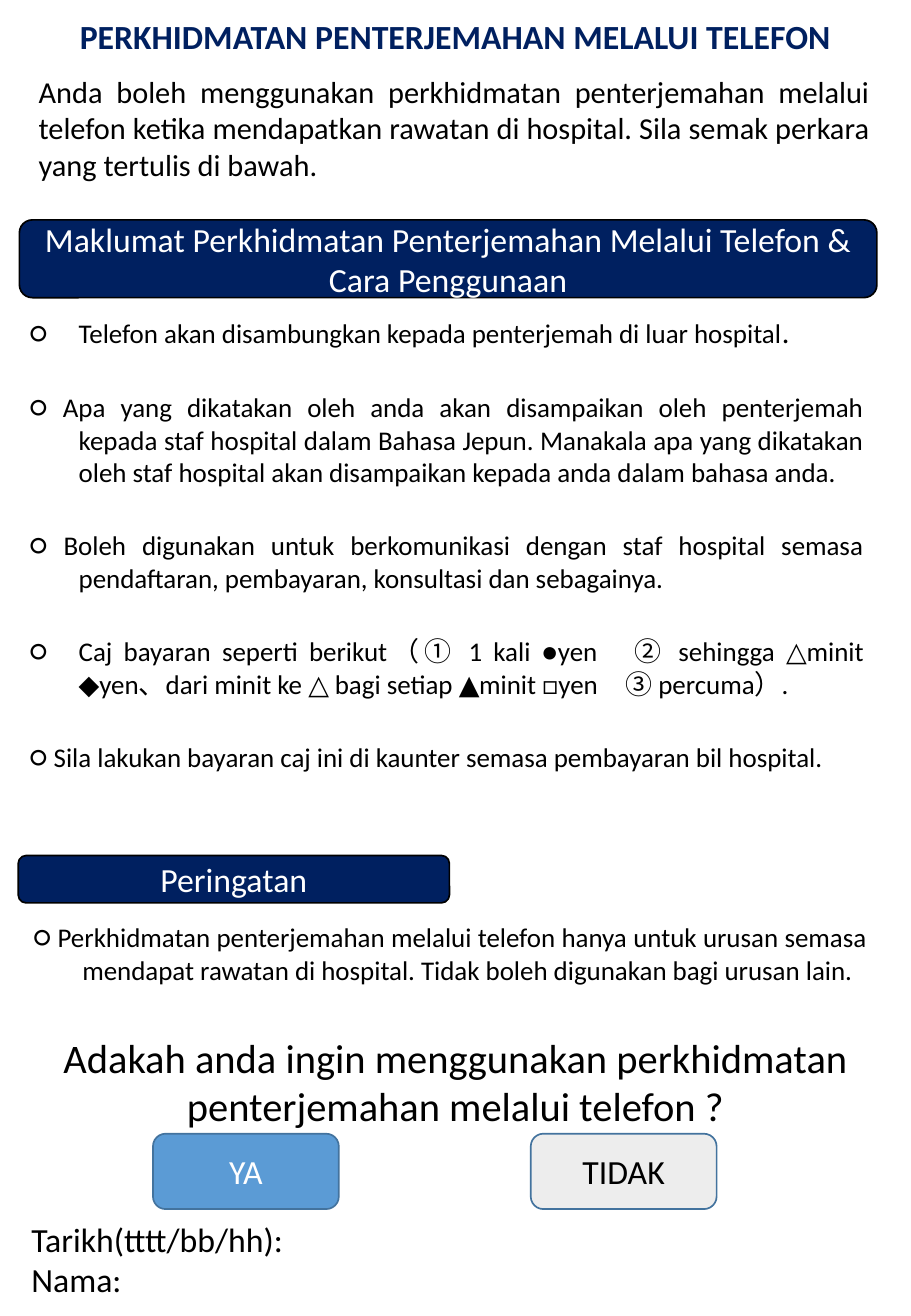
from pptx import Presentation
from pptx.dml.color import RGBColor
from pptx.enum.shapes import MSO_SHAPE
from pptx.enum.text import MSO_ANCHOR, MSO_AUTO_SIZE, PP_ALIGN as Align
from pptx.util import Emu, Pt

EMU_PER_PX = 9144  # 100 px to the inch
FONT = "Calibri"
MARK_SIZE, ITEM_SIZE = 18, 16
HANG = 40
COLORS = {
    "navy": "002060",
    "black": "000000",
    "white": "FFFFFF",
    "blue": "5B9BD5",
    "grey": "EDEDED",
    "outline": "43739E",
}

SERVICE_ITEMS = [
    [("○\t", MARK_SIZE),
     ("Telefon akan disambungkan kepada penterjemah di luar hospital", ITEM_SIZE),
     (".", MARK_SIZE)],
    [("○ ", MARK_SIZE),
     ("Apa yang dikatakan oleh anda akan disampaikan oleh penterjemah kepada staf "
      "hospital dalam Bahasa Jepun. Manakala apa yang dikatakan oleh staf hospital "
      "akan disampaikan kepada anda dalam bahasa anda.", ITEM_SIZE)],
    [("○ ", MARK_SIZE),
     ("Boleh digunakan untuk berkomunikasi dengan staf hospital semasa "
      "pendaftaran, pembayaran, konsultasi dan sebagainya.", ITEM_SIZE)],
    [("○\t", MARK_SIZE),
     ("Caj bayaran seperti berikut（① 1 kali ●yen　② sehingga △minit ◆yen、"
      "dari minit ke △ bagi setiap ▲minit □yen　③ percuma）.", ITEM_SIZE)],
    [("○ ", MARK_SIZE),
     ("Sila lakukan bayaran caj ini di kaunter semasa pembayaran bil hospital.",
      ITEM_SIZE)],
]
WARNING_ITEMS = [
    [("○ ", MARK_SIZE),
     ("Perkhidmatan penterjemahan melalui telefon hanya untuk urusan semasa "
      "mendapat rawatan di hospital. Tidak boleh digunakan bagi urusan lain.",
      ITEM_SIZE)],
]


def px(length):
    return Emu(length * EMU_PER_PX)


def rgb(name):
    return RGBColor.from_string(COLORS[name])


def write_text(frame, paragraphs, size=20, color="black", bold=False,
               align=Align.LEFT, hang=0, gap=0):
    """Fill a frame; a paragraph is a string or a list of (text, size) runs."""
    frame.word_wrap = True
    for index, content in enumerate(paragraphs):
        paragraph = frame.add_paragraph() if index else frame.paragraphs[0]
        paragraph.alignment = align
        if index and gap:
            paragraph.space_before = Pt(gap)
        if hang:
            properties = paragraph._p.get_or_add_pPr()
            properties.set("marL", str(px(hang)))
            properties.set("indent", str(px(-hang)))
        runs = [(content, size)] if isinstance(content, str) else content
        for text, run_size in runs:
            run = paragraph.add_run()
            run.text = text
            run.font.name = FONT
            run.font.size = Pt(run_size)
            run.font.bold = bold
            run.font.color.rgb = rgb(color)


def add_text(slide, box, paragraphs, **text_format):
    frame = slide.shapes.add_textbox(*map(px, box)).text_frame
    frame.auto_size = MSO_AUTO_SIZE.SHAPE_TO_FIT_TEXT
    write_text(frame, paragraphs, **text_format)


def add_items(slide, box, items):
    add_text(slide, box, items, align=Align.JUSTIFY, hang=HANG, gap=22)


def add_panel(slide, box, lines, fill="navy", outline="black", color="white"):
    panel = slide.shapes.add_shape(MSO_SHAPE.ROUNDED_RECTANGLE, *map(px, box))
    panel.shadow.inherit = False
    panel.fill.solid()
    panel.fill.fore_color.rgb = rgb(fill)
    panel.line.color.rgb = rgb(outline)
    panel.line.width = Pt(1)
    panel.text_frame.vertical_anchor = MSO_ANCHOR.MIDDLE
    write_text(panel.text_frame, lines, color=color, align=Align.CENTER)


def main():
    deck = Presentation()
    deck.slide_width, deck.slide_height = px(750), px(1083)
    slide = deck.slides.add_slide(deck.slide_layouts[6])

    add_text(slide, (0, 8, 750, 44),
             ["PERKHIDMATAN PENTERJEMAHAN MELALUI TELEFON"],
             color="navy", bold=True, align=Align.CENTER)
    add_text(slide, (22, 55, 704, 101),
             ["Anda boleh menggunakan perkhidmatan penterjemahan melalui telefon "
              "ketika mendapatkan rawatan di hospital. Sila semak perkara yang "
              "tertulis di bawah."],
             size=18, align=Align.JUSTIFY)

    add_panel(slide, (16, 181, 706, 64),
              ["Maklumat Perkhidmatan Penterjemahan Melalui Telefon &",
               "Cara Penggunaan"])
    add_items(slide, (15, 253, 706, 417), SERVICE_ITEMS)

    add_panel(slide, (15, 704, 355, 39), ["Peringatan"])
    add_items(slide, (18, 750, 706, 94), WARNING_ITEMS)

    add_text(slide, (0, 845, 750, 91),
             ["Adakah anda ingin menggunakan perkhidmatan penterjemahan melalui "
              "telefon ?"],
             size=24, align=Align.CENTER)
    answers = [("YA", 126, "blue", "white"), ("TIDAK", 437, "grey", "black")]
    for answer, left, fill, color in answers:
        add_panel(slide, (left, 933, 153, 62), [answer],
                  fill=fill, outline="outline", color=color)
    add_text(slide, (16, 998, 717, 77), ["Tarikh(tttt/bb/hh):", "Nama:"])

    deck.save("out.pptx")


if __name__ == "__main__":
    main()
